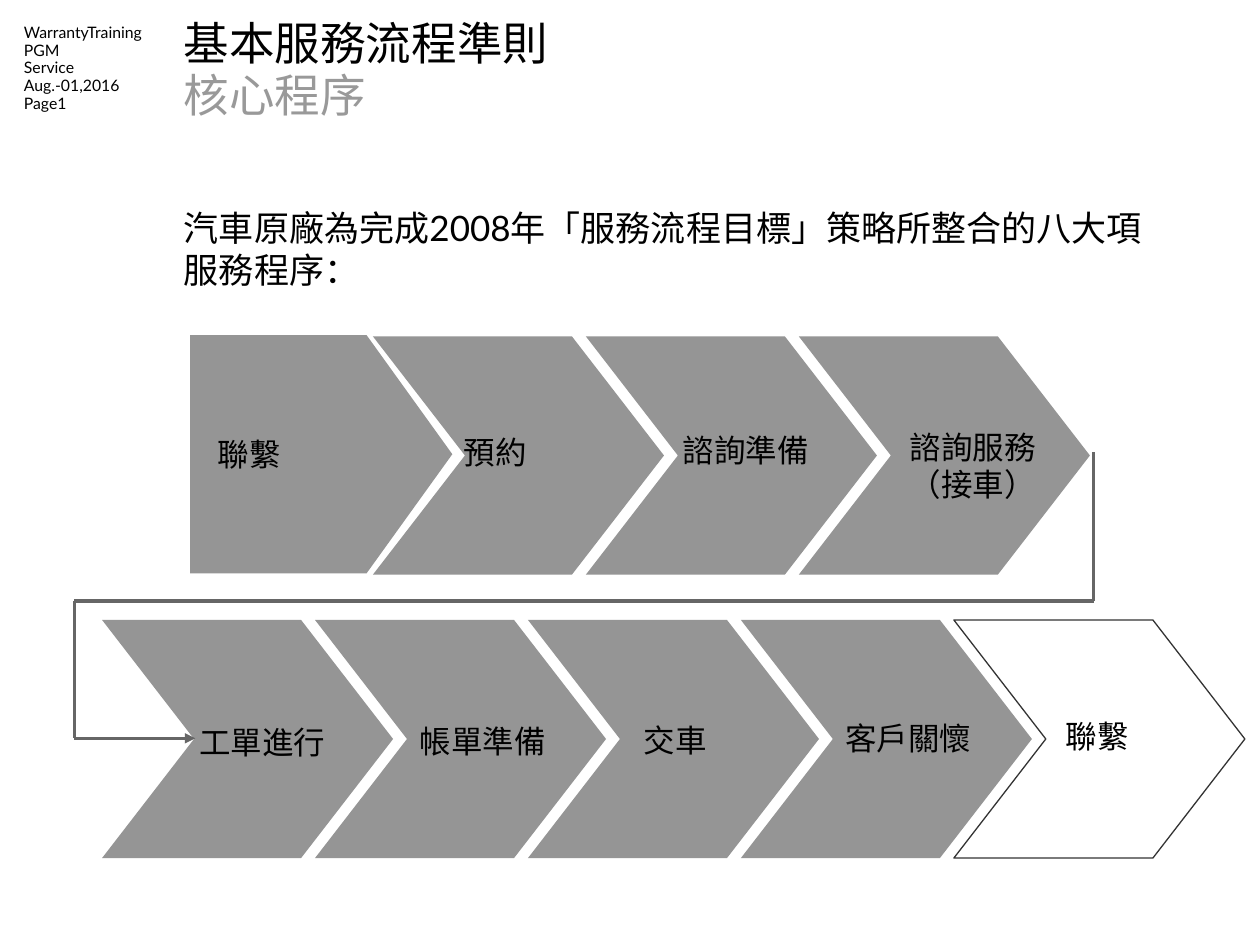
from typing import NamedTuple

from lxml import etree
from pptx import Presentation
from pptx.dml.color import RGBColor
from pptx.enum.shapes import MSO_CONNECTOR, MSO_SHAPE
from pptx.oxml.ns import qn
from pptx.util import Inches, Pt

CHEVRON, PENTAGON = MSO_SHAPE.CHEVRON, MSO_SHAPE.PENTAGON
STRAIGHT = MSO_CONNECTOR.STRAIGHT
FONT = "Lato"
BLACK, GREY, PALE, DARK, EDGE = "000000", "959595", "999999", "666666", "333333"
WIDE, HIGH, STEP = 2.31, 1.89, 1.69


class Line(NamedTuple):
    text: str
    color: str = BLACK
    lead: float | None = None


class Step(NamedTuple):
    left: float
    top: float
    width: float = WIDE
    kind: MSO_SHAPE = CHEVRON
    tip: float = 0.73
    solid: bool = True


class Label(NamedTuple):
    text: str
    left: float
    top: float


HEAD = [
    Line("WarrantyTraining", lead=10.3),
    Line("PGM", lead=10.3),
    Line("Service", lead=9.7),
    Line("Aug.-01,2016", lead=10.2),
    Line("Page1", lead=10.5),
]
TITLE = [Line("基本服務流程準則", lead=29.6), Line("核心程序", PALE, 29.6)]
INTRO = [Line("汽車原廠為完成2008年「服務流程目標」策略所整合的八大項服務程序：")]
STEPS = [
    Step(1.51, 2.66, 2.08, PENTAGON, 0.68),
    *(Step(2.96 + STEP * i, 2.67) for i in range(3)),
    *(Step(0.81 + STEP * i, 4.92) for i in range(4)),
    Step(7.57, 4.92, solid=False),
]
LABELS = [
    Label("聯繫", 1.72, 3.45),
    Label("預約", 3.67, 3.44),
    Label("諮詢準備", 5.41, 3.42),
    Label("諮詢服務", 7.21, 3.40),
    Label("（接車）", 7.21, 3.69),
    Label("工單進行", 1.57, 5.74),
    Label("帳單準備", 3.32, 5.73),
    Label("交車", 5.10, 5.72),
    Label("客戶關懷", 6.70, 5.71),
    Label("聯繫", 8.45, 5.69),
]
ROUTE = [(8.68, 3.59), (8.68, 4.77), (0.59, 4.77), (0.59, 5.86), (1.55, 5.86)]


def tint(code: str) -> RGBColor:
    """Turn a hex string into a colour."""
    return RGBColor.from_string(code)


def write(slide, lines: list[Line], box: tuple, size: float, wrap: bool = True) -> None:
    """Add a text box with one paragraph per line."""
    frame = slide.shapes.add_textbox(*map(Inches, box)).text_frame
    frame.word_wrap = wrap
    frame.margin_left = frame.margin_right = Inches(0)
    frame.margin_top = frame.margin_bottom = Inches(0)
    frame.text = "\n".join(line.text for line in lines)
    for para, line in zip(frame.paragraphs, lines):
        if line.lead:
            para.line_spacing = Pt(line.lead)
        for run in para.runs:
            run.font.name, run.font.size = FONT, Pt(size)
            run.font.color.rgb = tint(line.color)


def block(slide, step: Step) -> None:
    """Draw one process step."""
    box = map(Inches, (step.left, step.top, step.width, HIGH))
    shape = slide.shapes.add_shape(step.kind, *box)
    shape.shadow.inherit = False
    shape.adjustments[0] = step.tip / HIGH
    if step.solid:
        shape.fill.solid()
        shape.fill.fore_color.rgb = tint(GREY)
        shape.line.fill.background()
    else:
        shape.fill.background()
        shape.line.color.rgb = tint(EDGE)
        shape.line.width = Pt(0.75)


def link(slide, start: tuple, end: tuple, arrow: bool) -> None:
    """Draw one stretch of the route between the rows."""
    wire = slide.shapes.add_connector(STRAIGHT, *map(Inches, start + end))
    wire.line.color.rgb = tint(DARK)
    wire.line.width = Pt(1.75)
    if arrow:
        tail = etree.SubElement(wire.line._get_or_add_ln(), qn("a:tailEnd"))
        tail.set("type", "triangle")
    etree.SubElement(wire._element.spPr, qn("a:effectLst"))


def main() -> None:
    """Build and save the slide."""
    deck = Presentation()
    deck.slide_width, deck.slide_height = Inches(10), Inches(7.5)
    slide = deck.slides.add_slide(deck.slide_layouts[6])
    write(slide, HEAD, (0.19, 0.19, 0.99, 0.72), 9, False)
    write(slide, TITLE, (1.46, 0.14, 2.92, 0.84), 26)
    write(slide, INTRO, (1.46, 1.64, 7.82, 0.68), 20)
    for step in STEPS:
        block(slide, step)
    for start, end in zip(ROUTE, ROUTE[1:]):
        link(slide, start, end, end == ROUTE[-1])
    for text, left, top in LABELS:
        wide = 0.25 * len(text) + 0.03
        write(slide, [Line(text)], (left + 0.01, top, wide, 0.31), 18, False)
    deck.save("out.pptx")


if __name__ == "__main__":
    main()
